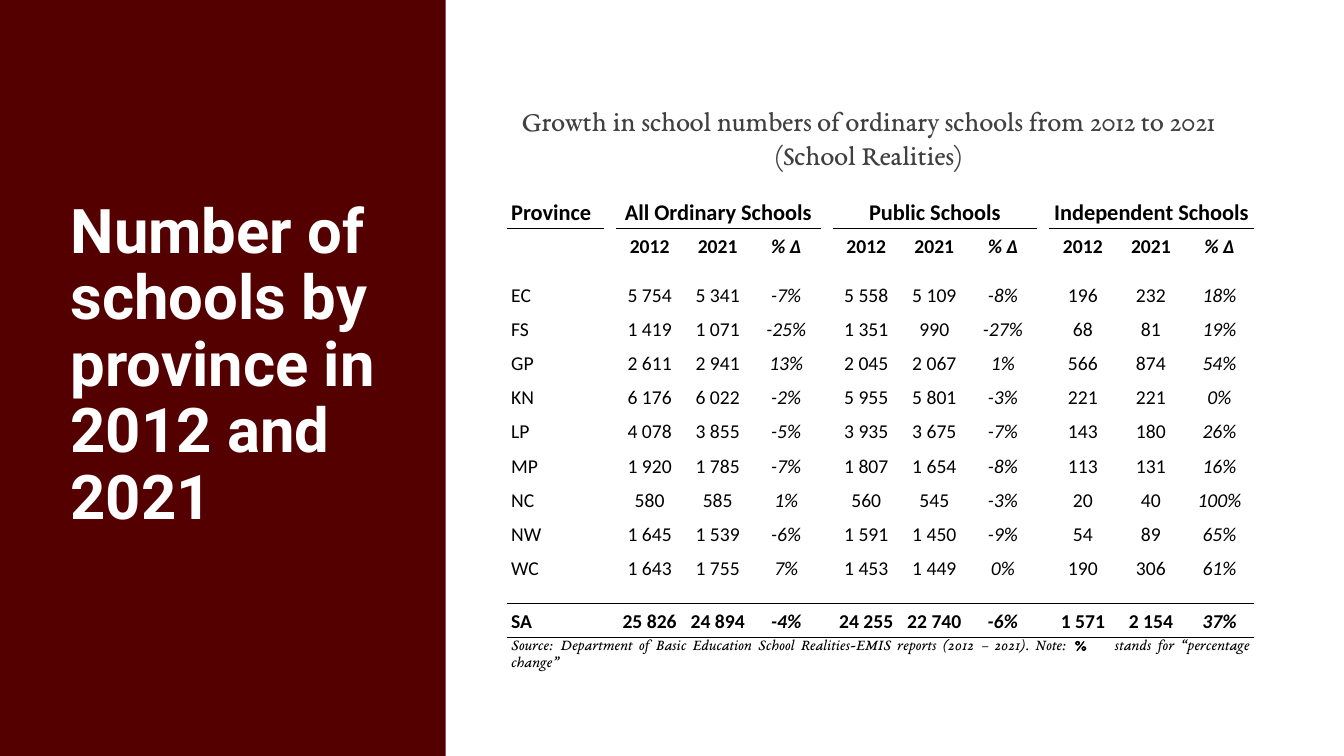
from lxml.etree import SubElement
from pptx import Presentation
from pptx.dml.color import RGBColor
from pptx.enum.shapes import MSO_SHAPE
from pptx.enum.text import MSO_ANCHOR, PP_ALIGN
from pptx.oxml import parse_xml
from pptx.oxml.ns import nsdecls, qn
from pptx.util import Inches, Pt

W, H = 13.33, 7.5
COLORS = {"sidebar": "550000", "white": "FFFFFF", "black": "000000", "caption": "404040"}
NO_GRID_STYLE = "{2D5ABB26-0587-4C30-8999-92F81FD0307C}"

GROUPS = ["All Ordinary Schools", "Public Schools", "Independent Schools"]
MEASURES = ["2012", "2021", "% Δ"]
PROVINCES = [
    "EC|5 754|5 341|-7%|5 558|5 109|-8%|196|232|18%",
    "FS|1 419|1 071|-25%|1 351|990|-27%|68|81|19%",
    "GP|2 611|2 941|13%|2 045|2 067|1%|566|874|54%",
    "KN|6 176|6 022|-2%|5 955|5 801|-3%|221|221|0%",
    "LP|4 078|3 855|-5%|3 935|3 675|-7%|143|180|26%",
    "MP|1 920|1 785|-7%|1 807|1 654|-8%|113|131|16%",
    "NC|580|585|1%|560|545|-3%|20|40|100%",
    "NW|1 645|1 539|-6%|1 591|1 450|-9%|54|89|65%",
    "WC|1 643|1 755|7%|1 453|1 449|0%|190|306|61%",
]
TOTAL = "SA|25 826|24 894|-4%|24 255|22 740|-6%|1 571|2 154|37%"
SOURCE = [
    ("Source: Department of Basic Education School Realities-EMIS reports (2012 – 2021). Note: ", False),
    ("% Δ ", True),
    ("stands for “percentage change”", False),
]

GROUP_STARTS = [2, 6, 10]
VALUE_COLS = [start + i for start in GROUP_STARTS for i in range(3)]
COL_WIDTHS = [0.96] + [0.11, 0.67, 0.68, 0.68] * 3
ROW, TOP_GAP, BOTTOM_GAP = 0.34, 0.15, 0.17
ROW_HEIGHTS = [ROW, ROW, TOP_GAP] + [ROW] * len(PROVINCES) + [BOTTOM_GAP, ROW, ROW]
FIRST_PROVINCE = 3
TOTAL_ROW = FIRST_PROVINCE + len(PROVINCES) + 1
SOURCE_ROW = TOTAL_ROW + 1


def write(p, text, size=14, font="Calibri", color="black", bold=False, italic=False,
          align=PP_ALIGN.CENTER, spacing=None):
    r = p.add_run()
    r.text = text
    r.font.size, r.font.name = Pt(size), font
    r.font.bold, r.font.italic = bold, italic
    r.font.color.rgb = RGBColor.from_string(COLORS[color])
    p.alignment = align
    if spacing:
        p.line_spacing = spacing


def rule_under(table, row, cols):
    for col in cols:
        line = parse_xml(
            f'<a:lnB {nsdecls("a")} w="12700"><a:solidFill>'
            f'<a:srgbClr val="{COLORS["black"]}"/></a:solidFill></a:lnB>')
        table.cell(row, col)._tc.get_or_add_tcPr().insert(0, line)


def add_sidebar(s, x, y, w, h):
    sp = s.shapes.add_shape(MSO_SHAPE.RECTANGLE, Inches(x), Inches(y), Inches(w), Inches(h))
    sp.shadow.inherit = False
    sp.fill.solid()
    sp.fill.fore_color.rgb = RGBColor.from_string(COLORS["sidebar"])
    sp.line.fill.background()
    s.shapes._spTree.insert(2, sp._element)

    title = s.shapes.title
    title.left, title.top = Inches(x + 0.6), Inches(y + 0.87)
    title.width, title.height = Inches(w - 1.1), Inches(h - 1.97)
    tf = title.text_frame
    tf.word_wrap, tf.vertical_anchor = True, MSO_ANCHOR.MIDDLE
    write(tf.paragraphs[0], "Number of schools by province in 2012 and 2021", size=44,
          font="Roboto", color="white", bold=True, align=PP_ALIGN.LEFT, spacing=0.9)


def add_caption(s, x, y, w, h):
    tf = s.shapes.add_textbox(Inches(x), Inches(y), Inches(w), Inches(h)).text_frame
    tf.word_wrap, tf.vertical_anchor = True, MSO_ANCHOR.MIDDLE
    write(tf.paragraphs[0],
          "Growth in school numbers of ordinary schools from 2012 to 2021 (School Realities)",
          size=20, font="EB Garamond", color="caption")


def add_grid(s, x, y):
    """Add the empty table with its sizes, margins and plain cells."""
    frame = s.shapes.add_table(len(ROW_HEIGHTS), len(COL_WIDTHS), Inches(x), Inches(y),
                               Inches(sum(COL_WIDTHS)), Inches(sum(ROW_HEIGHTS)))
    table = frame.table
    table.first_row = table.horz_banding = False
    table._tbl.tblPr.find(qn("a:tableStyleId")).text = NO_GRID_STYLE
    for col, width in zip(table.columns, COL_WIDTHS):
        col.width = Inches(width)
    for row, height in zip(table.rows, ROW_HEIGHTS):
        row.height = Inches(height)
    for cell in table.iter_cells():
        cell.fill.background()
        cell.margin_left = cell.margin_right = Inches(0.04)
        cell.margin_top = cell.margin_bottom = 0
        cell.vertical_anchor = MSO_ANCHOR.MIDDLE
    return table


def fill_row(table, row, line, bold=False, spacing=None):
    name, *values = line.split("|")
    write(table.cell(row, 0).text_frame.paragraphs[0], name, bold=bold,
          align=PP_ALIGN.JUSTIFY, spacing=spacing)
    for i, (col, value) in enumerate(zip(VALUE_COLS, values)):
        write(table.cell(row, col).text_frame.paragraphs[0], value, bold=bold,
              italic=i % 3 == 2, spacing=spacing)


def add_school_table(s, x, y):
    table = add_grid(s, x, y)
    header = dict(size=16, bold=True, spacing=1.07)
    write(table.cell(0, 0).text_frame.paragraphs[0], "Province",
          align=PP_ALIGN.JUSTIFY, **header)
    for start, group in zip(GROUP_STARTS, GROUPS):
        table.cell(0, start).merge(table.cell(0, start + 2))
        write(table.cell(0, start).text_frame.paragraphs[0], group, **header)

    fill_row(table, 1, "|".join([""] + MEASURES * 3), bold=True, spacing=1.07)
    for row, line in enumerate(PROVINCES, FIRST_PROVINCE):
        fill_row(table, row, line)
    fill_row(table, TOTAL_ROW, TOTAL, bold=True, spacing=1.07)

    last_col = len(COL_WIDTHS) - 1
    source = table.cell(SOURCE_ROW, 0)
    source.merge(table.cell(SOURCE_ROW, last_col))
    for text, bold in SOURCE:
        write(source.text_frame.paragraphs[0], text, size=11, font="EB Garamond", bold=bold,
              italic=True, align=PP_ALIGN.JUSTIFY, spacing=1.07)

    rule_under(table, 0, [0] + VALUE_COLS)
    for row in (TOTAL_ROW - 1, TOTAL_ROW):
        rule_under(table, row, range(last_col + 1))
    for cell in table.iter_cells():
        if not cell.text:
            p = cell.text_frame.paragraphs[0]
            for r in p.runs:
                p._p.remove(r._r)
            SubElement(p._p, qn("a:endParaRPr"), sz="400")


def main():
    prs = Presentation()
    prs.slide_width, prs.slide_height = Inches(W), Inches(H)
    s = prs.slides.add_slide(prs.slide_layouts[5])
    add_sidebar(s, 0, 0, 4.42, H)
    add_school_table(s, 5.03, 1.93)
    add_caption(s, 5.03, 0.98, 7.17, 0.77)
    prs.save("out.pptx")


if __name__ == "__main__":
    main()
